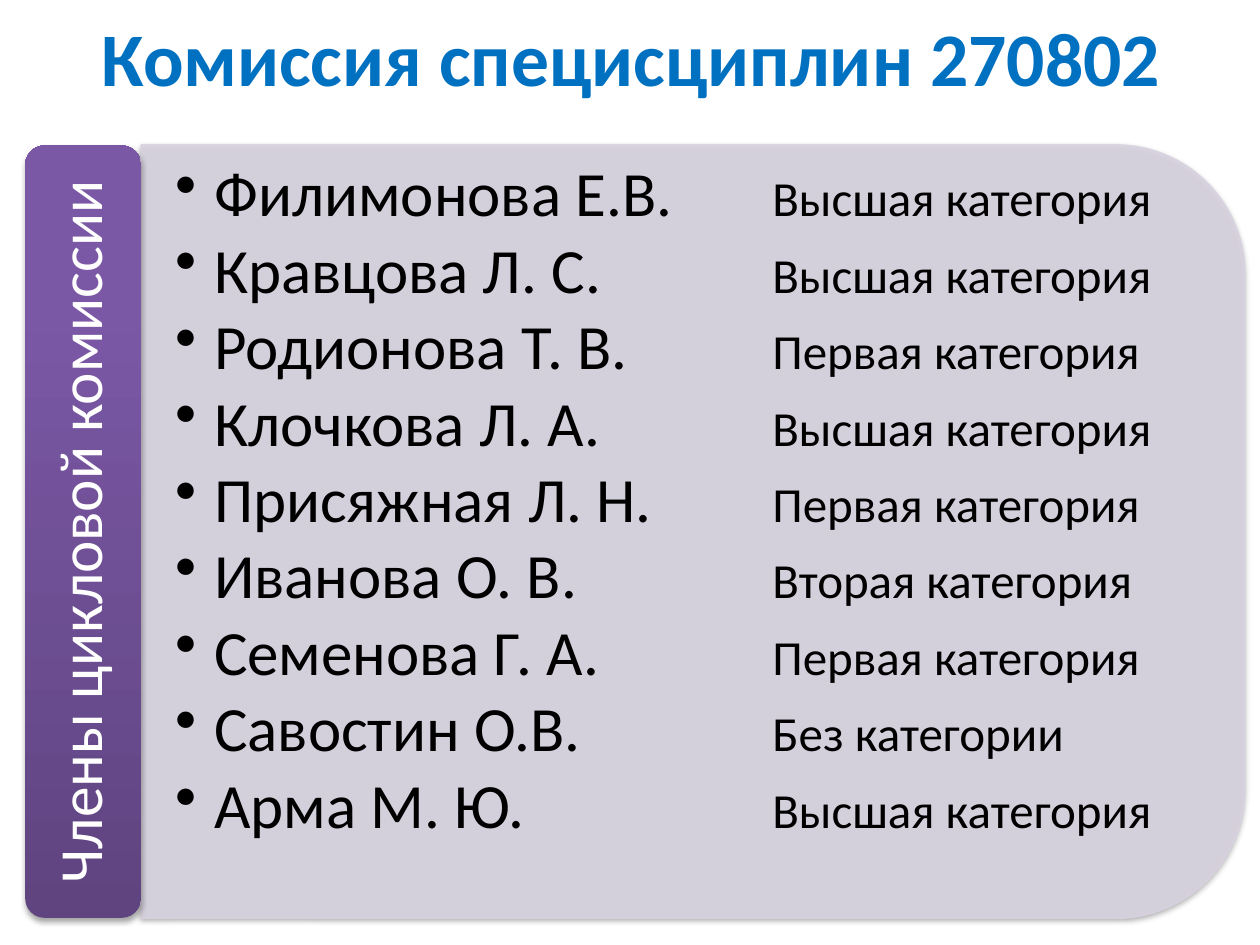
import pptx
import pptx.util
import pptx.dml.color
import pptx.enum.shapes
import pptx.enum.text
import pptx.oxml
from pptx.oxml.ns import qn
from lxml import etree

WIDTH, HEIGHT = 10, 7.5
FONT = "Calibri"
DRAWING = 'xmlns:a="http://schemas.openxmlformats.org/drawingml/2006/main"'
MIDDLE_Y = 4.22      # shared middle of the side label and the panel
DIVIDE_X = 1.12      # where the side label meets the panel
CATEGORY_TAB = 4.74  # second column, from the left edge of the text

MEMBERS = [
    ("Филимонова Е.В.", "Высшая категория"),
    ("Кравцова Л. С.", "Высшая категория"),
    ("Родионова Т. В.", "Первая категория"),
    ("Клочкова Л. А.", "Высшая категория"),
    ("Присяжная Л. Н.", "Первая категория"),
    ("Иванова О. В.", "Вторая категория"),
    ("Семенова Г. А.", "Первая категория"),
    ("Савостин О.В.", "Без категории"),
    ("Арма М. Ю.", "Высшая категория"),
]


def inches(*lengths):
    return [pptx.util.Inches(length) for length in lengths]


def color(hex_string):
    return pptx.dml.color.RGBColor.from_string(hex_string)


def add_xml(parent, markup):
    parent.append(pptx.oxml.parse_xml(markup))


def add_span(para, text, size=36, hex_color="000000", bold=False):
    span = para.add_run()
    span.text = text
    span.font.name = FONT
    span.font.size = pptx.util.Pt(size)
    span.font.bold = bold
    span.font.color.rgb = color(hex_color)


def add_box(page, left, top, width, height, insets=(0.1, 0.05, 0.1, 0.05)):
    box = page.shapes.add_textbox(*inches(left, top, width, height))
    frame = box.text_frame
    frame.word_wrap = True
    frame.vertical_anchor = pptx.enum.text.MSO_ANCHOR.MIDDLE
    (frame.margin_left, frame.margin_top,
     frame.margin_right, frame.margin_bottom) = inches(*insets)
    return frame


def add_shadow(shape):
    add_xml(shape._element.spPr, f"""
        <a:effectLst {DRAWING}>
          <a:outerShdw blurRad="39370" dist="22860" dir="5400000" rotWithShape="0">
            <a:srgbClr val="000000"><a:alpha val="35000"/></a:srgbClr>
          </a:outerShdw>
        </a:effectLst>""")


def set_alpha(fill_parent, percent):
    for swatch in fill_parent.iter(qn("a:srgbClr")):
        etree.SubElement(swatch, qn("a:alpha")).set("val", str(percent * 1000))


def add_title(page, text):
    frame = add_box(page, 0.51, 0.02, 0.9 * WIDTH, 0.85)
    para = frame.paragraphs[0]
    para.alignment = pptx.enum.text.PP_ALIGN.CENTER
    add_span(para, text, size=43.2, hex_color="0070C0", bold=True)


def add_panel(page):
    """Panel with round right corners: a quarter turn of a top-rounded shape."""
    width, height = 8.76, 6.14
    shape = page.shapes.add_shape(
        pptx.enum.shapes.MSO_SHAPE.ROUND_2_SAME_RECTANGLE,
        *inches(DIVIDE_X + (width - height) / 2, MIDDLE_Y - width / 2, height, width))
    shape.rotation = 90
    shape.fill.solid()
    shape.fill.fore_color.rgb = color("D8D3E0")
    shape.line.color.rgb = color("D8D3E0")
    shape.line.width = pptx.util.Pt(0.75)
    set_alpha(shape._element.spPr, 90)
    add_shadow(shape)


def add_members(page):
    frame = add_box(page, DIVIDE_X, 1.45, 8.46, 5.54, insets=(0.27, 0, 0.27, 0.47))
    indent, tab = inches(0.31, CATEGORY_TAB)
    for index, (name, category) in enumerate(MEMBERS):
        para = frame.add_paragraph() if index else frame.paragraphs[0]
        para.line_spacing = 0.9
        para.space_after = pptx.util.Pt(4.8)
        properties = para._p.get_or_add_pPr()
        properties.set("marL", str(indent))
        properties.set("indent", str(-indent))
        add_xml(properties, f'<a:buChar {DRAWING} char="•"/>')
        add_xml(properties, f'<a:tabLst {DRAWING}><a:tab pos="{tab}" algn="l"/></a:tabLst>')
        add_span(para, name)
        add_span(para, "\t" + category, size=28)


def add_side_label(page, text):
    left, width, height = 0.2, DIVIDE_X - 0.2, 6.13
    top = MIDDLE_Y - height / 2
    shape = page.shapes.add_shape(
        pptx.enum.shapes.MSO_SHAPE.ROUNDED_RECTANGLE, *inches(left, top, width, height))
    stops = [(0, "5F4480"), (80, "7B58A6"), (100, "7C57A8")]
    marks = "".join(f'<a:gs pos="{place * 1000}"><a:srgbClr val="{tint}"/></a:gs>'
                    for place, tint in stops)
    add_xml(shape._element.spPr, f"""
        <a:gradFill {DRAWING} rotWithShape="1">
          <a:gsLst>{marks}</a:gsLst><a:lin ang="16200000" scaled="0"/>
        </a:gradFill>""")
    shape.line.fill.background()
    add_shadow(shape)

    # Upward text, set in from the edge of the bar
    edge = 0.04
    frame = add_box(page, left + edge, top + edge, width - 2 * edge, height - 2 * edge,
                    insets=(0.15, 0.07, 0.15, 0.07))
    frame._txBody.bodyPr.set("vert", "vert270")
    para = frame.paragraphs[0]
    para.alignment = pptx.enum.text.PP_ALIGN.CENTER
    para.line_spacing = 0.9
    add_span(para, text, size=35, hex_color="FFFFFF")


def main():
    deck = pptx.Presentation()
    deck.slide_width, deck.slide_height = inches(WIDTH, HEIGHT)
    page = deck.slides.add_slide(deck.slide_layouts[6])
    add_title(page, "Комиссия специсциплин 270802")
    add_panel(page)
    add_members(page)
    add_side_label(page, "Члены цикловой комиссии")
    deck.save("out.pptx")


if __name__ == "__main__":
    main()
